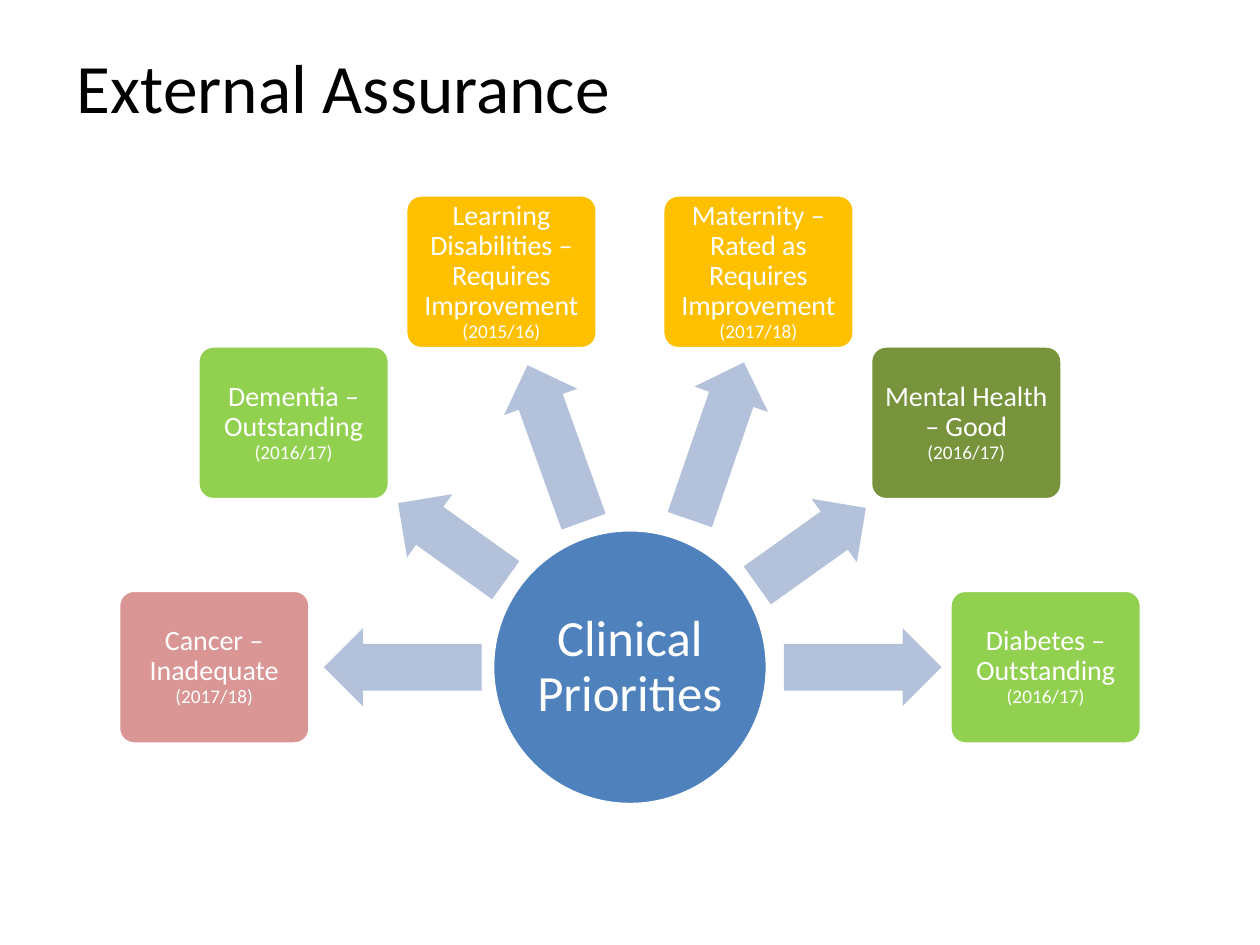
from dataclasses import dataclass
from math import cos, radians, sin

from pptx import Presentation
from pptx.dml.color import RGBColor as Color
from pptx.enum.shapes import MSO_SHAPE as Shape
from pptx.enum.text import MSO_ANCHOR as Anchor, PP_ALIGN as Align
from pptx.util import Cm, Pt


@dataclass(frozen=True)
class Theme:
    font: str = "Calibri"
    title_size: float = 39.6
    hub_size: int = 29
    label_size: int = 16
    year_size: int = 11
    black: str = "000000"
    white: str = "FFFFFF"
    hub: str = "4F81BD"
    arrow: str = "B3C1DB"
    ratings: tuple = (
        ("Inadequate", "D99694"),
        ("Requires Improvement", "FFC000"),
        ("Good", "77933C"),
        ("Outstanding", "92D050"),
    )


THEME = Theme()
RATING_COLORS = dict(THEME.ratings)

TITLE = "External Assurance"
HUB = "Clinical Priorities"
PRIORITIES = [
    ("Cancer –", "Inadequate", "(2017/18)"),
    ("Dementia –", "Outstanding", "(2016/17)"),
    ("Learning Disabilities –", "Requires Improvement", "(2015/16)"),
    ("Maternity – Rated as", "Requires Improvement", "(2017/18)"),
    ("Mental Health –", "Good", "(2016/17)"),
    ("Diabetes –", "Outstanding", "(2016/17)"),
]
ARROWS = [
    (-4.58, 0, 3.18, 0),
    (-3.59, -2.53, 2.67, 35.6),
    (-1.5, -4.51, 3.35, 70.3),
    (1.75, -4.56, 3.35, 109),
    (3.66, -2.43, 2.69, 144.5),
    (4.69, 0, 3.18, 180),
]

CENTER_X, CENTER_Y = 12.7, 13.45
HUB_DIAMETER = 5.54
RADIUS = 8.38
BOX_WIDTH, BOX_HEIGHT = 3.86, 3.1
ARROW_HEIGHT = 1.57


def add_centered(slide, kind, dx, dy, width, height, fill, outlined=True):
    left = CENTER_X + dx - width / 2
    top = CENTER_Y + dy - height / 2
    shape = slide.shapes.add_shape(kind, Cm(left), Cm(top), Cm(width), Cm(height))
    shape.shadow.inherit = False
    shape.fill.solid()
    shape.fill.fore_color.rgb = Color.from_string(fill)
    if outlined:
        shape.line.color.rgb = Color.from_string(THEME.white)
        shape.line.width = Pt(2)
    else:
        shape.line.fill.background()
    return shape


def write(shape, lines, color, align, spacing, margin):
    frame = shape.text_frame
    frame.word_wrap = True
    frame.vertical_anchor = Anchor.MIDDLE
    frame.margin_left = frame.margin_right = Cm(margin)
    frame.margin_top = frame.margin_bottom = Cm(margin)
    for index, (text, size) in enumerate(lines):
        paragraph = frame.add_paragraph() if index else frame.paragraphs[0]
        paragraph.text = text
        paragraph.alignment = align
        paragraph.line_spacing = spacing
        paragraph.font.name = THEME.font
        paragraph.font.size = Pt(size)
        paragraph.font.color.rgb = Color.from_string(color)


def add_priority(slide, angle, priority):
    subject, rating, year = priority
    box = add_centered(
        slide, Shape.ROUNDED_RECTANGLE,
        -RADIUS * cos(angle), -RADIUS * sin(angle),
        BOX_WIDTH, BOX_HEIGHT, RATING_COLORS[rating],
    )
    box.adjustments[0] = 0.1
    lines = [(f"{subject} {rating}", THEME.label_size), (year, THEME.year_size)]
    write(box, lines, THEME.white, Align.CENTER, 0.9, 0.08)


def add_arrow(slide, dx, dy, length, rotation):
    arrow = add_centered(
        slide, Shape.LEFT_ARROW, dx, dy, length, ARROW_HEIGHT,
        THEME.arrow, outlined=False,
    )
    arrow.adjustments[0] = 0.6
    arrow.adjustments[1] = 0.5
    arrow.rotation = rotation


def main():
    presentation = Presentation()
    presentation.slide_width, presentation.slide_height = Cm(25.4), Cm(19.05)
    slide = presentation.slides.add_slide(presentation.slide_layouts[6])

    title = slide.shapes.add_textbox(Cm(1.3), Cm(0.74), Cm(20.42), Cm(2))
    write(title, [(TITLE, THEME.title_size)], THEME.black, Align.LEFT, 1.0, 0.25)

    hub = add_centered(
        slide, Shape.OVAL, 0, 0, HUB_DIAMETER, HUB_DIAMETER, THEME.hub
    )
    write(hub, [(HUB, THEME.hub_size)], THEME.white, Align.CENTER, 0.9, 0.05)

    step = radians(180 / (len(PRIORITIES) - 1))
    for index, (priority, arrow) in enumerate(zip(PRIORITIES, ARROWS)):
        add_arrow(slide, *arrow)
        add_priority(slide, index * step, priority)

    presentation.save("out.pptx")


if __name__ == "__main__":
    main()
